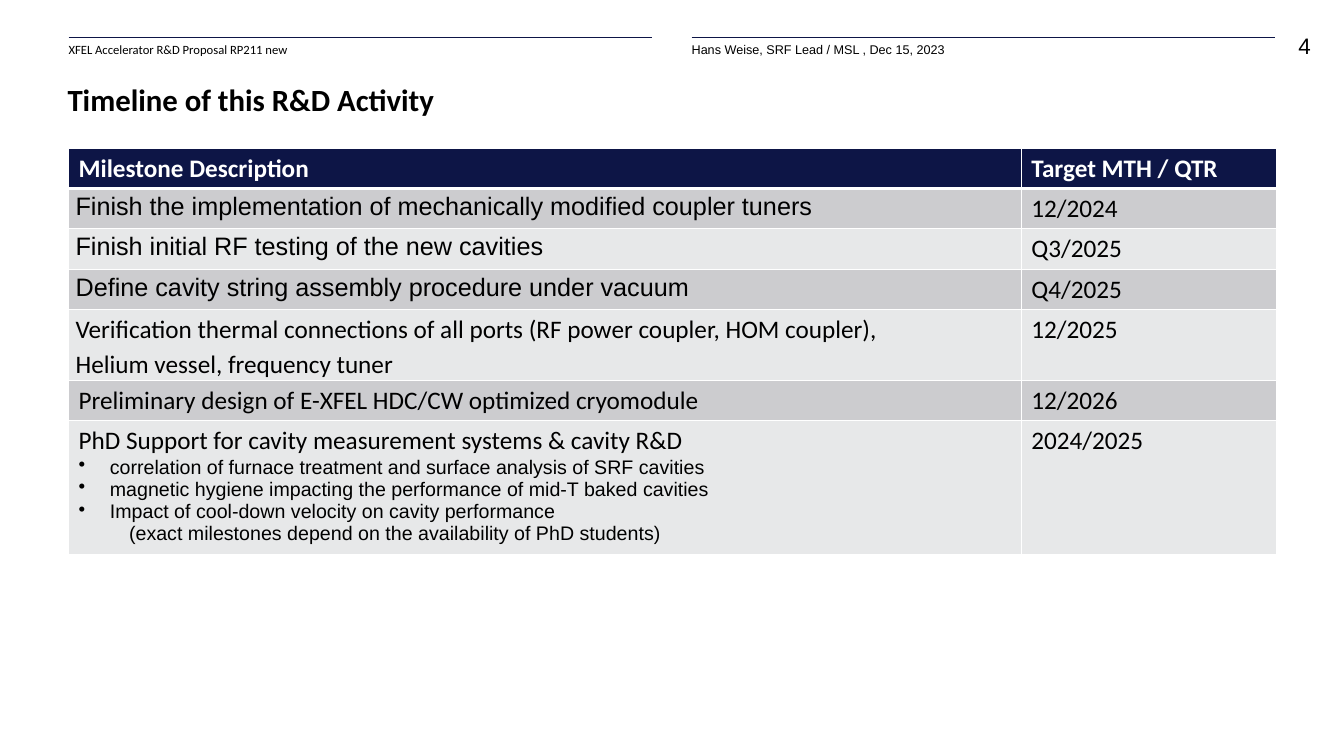
from collections import namedtuple

import pptx
import pptx.dml.color
import pptx.enum.shapes
import pptx.enum.text
import pptx.oxml
import pptx.oxml.ns
import pptx.util

Inches = pptx.util.Inches
Box = namedtuple("Box", "left top width height")


class Theme:
    navy, white, black = "0D1546", "FFFFFF", "000000"
    bands = ("CCCCCF", "E7E8E9")
    sans, humanist = "Arial", "Calibri"
    small, detail, number, body, title = 9, 14, 16, 18, 22
    hairline, border, header_border = 0.5, 1, 3


PAGE_WIDTH, PAGE_HEIGHT = 13.33, 7.5
MARGIN, COLUMN, GUTTER = 0.68, 5.79, 0.39
CONTENT = 2 * COLUMN + GUTTER

HEADINGS = ("Milestone Description", "Target MTH / QTR")
# Lines of each milestone, target, font, tight cell insets, row height
MILESTONES = [
    (["Finish the implementation of mechanically modified coupler tuners"],
     "12/2024", Theme.sans, True, 0.4),
    (["Finish initial RF testing of the new cavities"],
     "Q3/2025", Theme.sans, True, 0.4),
    (["Define cavity string assembly procedure under vacuum"],
     "Q4/2025", Theme.sans, True, 0.4),
    (["Verification thermal connections of all ports (RF power coupler, HOM coupler),",
      "Helium vessel, frequency tuner"],
     "12/2025", Theme.humanist, True, 0.7),
    (["Preliminary design of E-XFEL HDC/CW optimized cryomodule"],
     "12/2026", Theme.humanist, False, 0.4),
    (["PhD Support for cavity measurement systems & cavity R&D"],
     "2024/2025", Theme.humanist, False, 1.27),
]
PHD_TOPICS = [
    "correlation of furnace treatment and surface analysis of SRF cavities",
    "magnetic hygiene impacting the performance of mid-T baked cavities",
    "Impact of cool-down velocity on cavity performance",
]
PHD_NOTE = "(exact milestones depend on the availability of PhD students)"


def rgb(value):
    return pptx.dml.color.RGBColor.from_string(value)


def style(para, size, name, color=Theme.black, bold=False):
    para.font.size = pptx.util.Pt(size)
    para.font.name = name
    para.font.bold = bold
    para.font.color.rgb = rgb(color)


def add_label(page, box, text, size, name, bold=False, wrap=True,
              align=pptx.enum.text.PP_ALIGN.LEFT,
              anchor=pptx.enum.text.MSO_ANCHOR.TOP):
    frame = page.shapes.add_textbox(*map(Inches, box)).text_frame
    frame.margin_left = frame.margin_right = 0
    frame.margin_top = frame.margin_bottom = 0
    frame.word_wrap = wrap
    frame.vertical_anchor = anchor
    para = frame.paragraphs[0]
    para.text = text
    para.alignment = align
    style(para, size, name, bold=bold)


def add_header_column(page, box, text, name):
    """Place a rule along the top of the box and a caption beneath it."""
    rule = page.shapes.add_connector(
        pptx.enum.shapes.MSO_CONNECTOR.STRAIGHT, Inches(box.left), Inches(box.top),
        Inches(box.left + box.width), Inches(box.top))
    rule.line.color.rgb = rgb(Theme.navy)
    rule.line.width = pptx.util.Pt(Theme.hairline)
    properties = rule._element.spPr
    properties.append(properties.makeelement(pptx.oxml.ns.qn("a:effectLst"), {}))
    caption = Box(box.left, box.top + 0.05, box.width, box.height - 0.05)
    add_label(page, caption, text, Theme.small, name)


def paint_cell(cell, fill, bottom=Theme.border):
    """Draw white borders, then the fill, in the order the schema asks for."""
    properties = cell._tc.get_or_add_tcPr()
    for side in "LRTB":
        width = pptx.util.Pt(bottom if side == "B" else Theme.border)
        properties.append(pptx.oxml.parse_xml(
            f'<a:ln{side} {pptx.oxml.ns.nsdecls("a")} w="{width}"><a:solidFill>'
            f'<a:srgbClr val="{Theme.white}"/></a:solidFill></a:ln{side}>'))
    cell.fill.solid()
    cell.fill.fore_color.rgb = rgb(fill)


def indent(para, left, hanging=0, bullet=None):
    properties = para._p.get_or_add_pPr()
    properties.set("marL", str(Inches(left)))
    properties.set("indent", str(-Inches(hanging)))
    if bullet:
        properties.append(properties.makeelement(
            pptx.oxml.ns.qn("a:buChar"), {"char": bullet}))


def write_cell(cell, lines, name, color=Theme.black, bold=False, tight=False):
    if tight:
        cell.margin_left = cell.margin_right = Inches(0.07)
        cell.margin_top = cell.margin_bottom = 0
    cell.text = "\n".join(lines)
    for para in cell.text_frame.paragraphs:
        if tight:
            para.line_spacing = 1.15
        style(para, Theme.body, name, color, bold)


def add_phd_topics(cell):
    for topic in PHD_TOPICS:
        para = cell.text_frame.add_paragraph()
        para.text = topic
        indent(para, 0.31, 0.31, "•")
        style(para, Theme.detail, Theme.sans)
    note = cell.text_frame.add_paragraph()
    note.text = PHD_NOTE
    note.level = 1
    indent(note, 0.5)
    style(note, Theme.detail, Theme.sans)


def add_timeline(page, box):
    table = page.shapes.add_table(
        len(MILESTONES) + 1, len(HEADINGS), *map(Inches, box)).table
    target_width = 2.53
    table.columns[0].width = Inches(box.width - target_width)
    table.columns[1].width = Inches(target_width)

    table.rows[0].height = Inches(0.4)
    for column, heading in enumerate(HEADINGS):
        cell = table.cell(0, column)
        paint_cell(cell, Theme.navy, Theme.header_border)
        write_cell(cell, [heading], Theme.humanist, Theme.white, True)

    for row, (lines, target, name, tight, height) in enumerate(MILESTONES, 1):
        table.rows[row].height = Inches(height)
        description, date = table.cell(row, 0), table.cell(row, 1)
        for cell in (description, date):
            paint_cell(cell, Theme.bands[(row - 1) % 2])
        write_cell(description, lines, name, tight=tight)
        write_cell(date, [target], Theme.humanist)
    add_phd_topics(description)


def build_timeline_page(deck):
    page = deck.slides.add_slide(deck.slide_layouts[6])
    add_label(page, Box(12.44, 0.32, 0.56, 0.32), "4", Theme.number, Theme.sans,
              wrap=False, align=pptx.enum.text.PP_ALIGN.RIGHT)
    captions = [("XFEL Accelerator R&D Proposal RP211 new", Theme.humanist),
                ("Hans Weise, SRF Lead / MSL , Dec 15, 2023", Theme.sans)]
    for index, (text, name) in enumerate(captions):
        left = MARGIN + index * (COLUMN + GUTTER)
        add_header_column(page, Box(left, 0.37, COLUMN, 0.29), text, name)
    add_label(page, Box(MARGIN - 0.01, 0.78, CONTENT, 0.39),
              "Timeline of this R&D Activity", Theme.title, Theme.humanist, bold=True,
              anchor=pptx.enum.text.MSO_ANCHOR.BOTTOM)
    add_timeline(page, Box(MARGIN, 1.47, CONTENT + 0.01, 4))


def main():
    deck = pptx.Presentation()
    deck.slide_width, deck.slide_height = Inches(PAGE_WIDTH), Inches(PAGE_HEIGHT)
    build_timeline_page(deck)
    deck.save("out.pptx")


if __name__ == "__main__":
    main()
